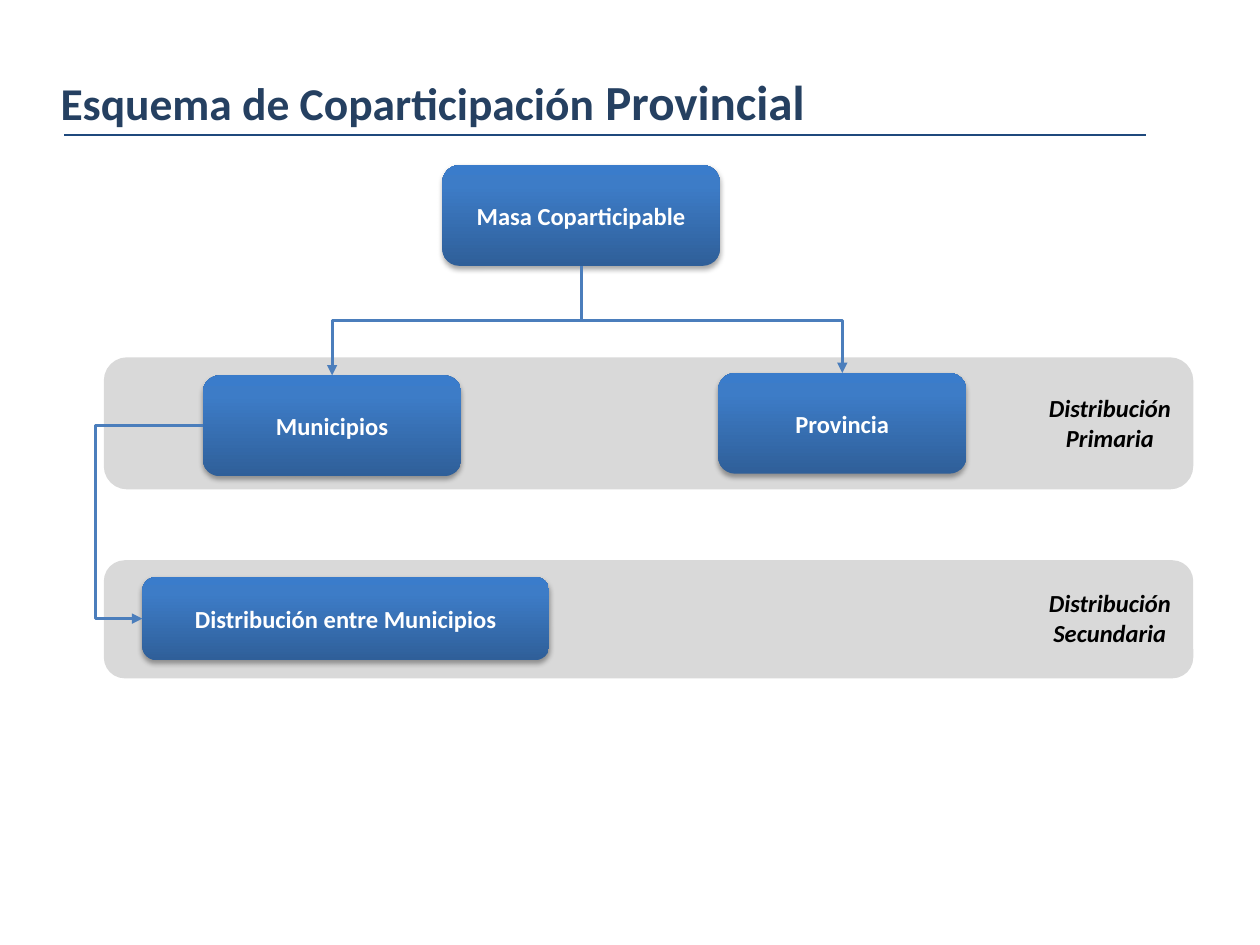
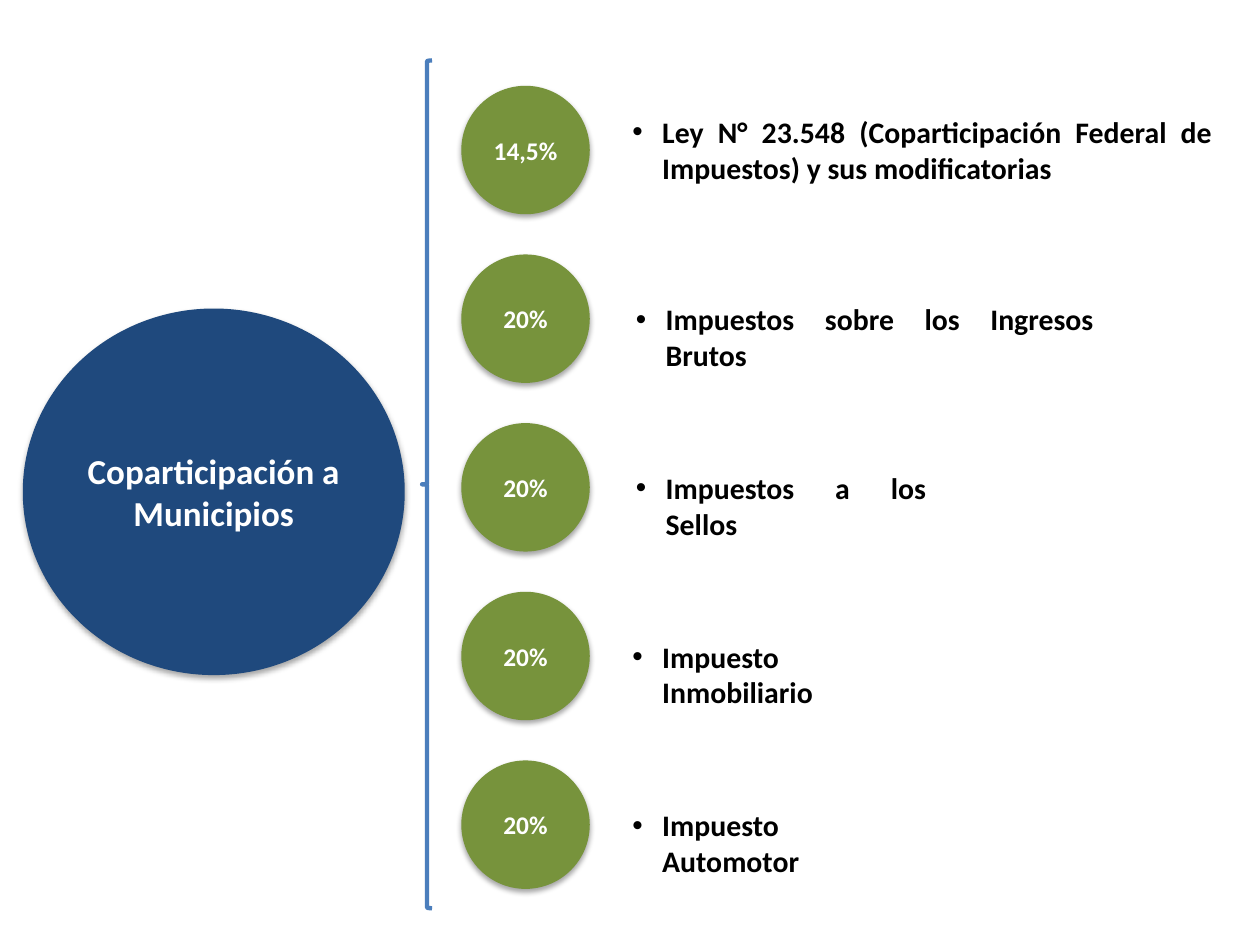
from lxml import etree
from pptx import Presentation
from pptx import util as u
from pptx.dml.color import RGBColor
from pptx.enum import shapes, text
from pptx.oxml import parse_xml
from pptx.oxml import ns
from pptx.oxml.xmlchemy import OxmlElement

COLORS = {
    "title": "254061", "navy": "1F497D", "blue": "4B7EBC", "green": "77933C",
    "band": "D9D9D9", "white": "FFFFFF", "black": "000000",
}
GRADIENT = ((0, "2F5F99"), (80, "3D7CC7"), (100, "3A7CCB"))
FONT = "Calibri"
SHAPE = shapes.MSO_SHAPE
ALIGN = text.PP_ALIGN
ANCHOR = text.MSO_ANCHOR


def rgb(name):
    return RGBColor.from_string(COLORS[name])


def child(parent, tag, **attributes):
    element = etree.SubElement(parent, ns.qn(tag))
    for key, value in attributes.items():
        element.set(key, str(value))
    return element


def write(shape, runs, size=14, color="black", italic=False, align=ALIGN.CENTER,
          anchor=ANCHOR.MIDDLE, inset=(0.25, 0.13), bullet=None):
    frame = shape.text_frame
    frame.word_wrap = True
    frame.auto_size = text.MSO_AUTO_SIZE.NONE
    frame.vertical_anchor = anchor
    frame.margin_left = frame.margin_right = u.Cm(inset[0])
    frame.margin_top = frame.margin_bottom = u.Cm(inset[1])
    paragraph = frame.paragraphs[0]
    paragraph.alignment = align
    if bullet:
        properties = paragraph._p.get_or_add_pPr()
        properties.set("marL", str(u.Cm(0.6)))
        properties.set("indent", str(-u.Cm(0.6)))
        child(properties, "a:buFont", typeface="Arial")
        child(properties, "a:buChar", char=bullet)
    if isinstance(runs, str):
        runs = [(runs, size)]
    for words, run_size in runs:
        run = paragraph.add_run()
        run.text = words
        run.font.name = FONT
        run.font.size = u.Pt(run_size)
        run.font.bold = True
        run.font.italic = italic
        run.font.color.rgb = rgb(color)


class Deck:
    def __init__(self):
        self.presentation = Presentation()
        self.presentation.slide_width = u.Cm(25.4)
        self.presentation.slide_height = u.Cm(19.05)
        self.slide = None

    def add_slide(self, layout):
        self.slide = self.presentation.slides.add_slide(
            self.presentation.slide_layouts.get_by_name(layout))

    def title(self, runs, left, top, width, height):
        title = self.slide.shapes.title
        title.left, title.top = u.Cm(left), u.Cm(top)
        title.width, title.height = u.Cm(width), u.Cm(height)
        write(title, runs, color="title", align=ALIGN.LEFT, anchor=ANCHOR.TOP)

    def shape(self, kind, left, top, width, height, fill=None, line=None,
              line_width=2, shadow=False):
        shape = self.slide.shapes.add_shape(
            kind, u.Cm(left), u.Cm(top), u.Cm(width), u.Cm(height))
        shape.shadow.inherit = False
        if fill:
            shape.fill.solid()
            shape.fill.fore_color.rgb = rgb(fill)
        else:
            shape.fill.background()
        if line:
            shape.line.color.rgb = rgb(line)
            shape.line.width = u.Pt(line_width)
        else:
            shape.line.fill.background()
        if shadow:
            effects = shape._element.spPr.find(ns.qn("a:effectLst"))
            outer = child(effects, "a:outerShdw", blurRad=u.Pt(3.1), dist=u.Pt(1.8),
                          dir=5400000, rotWithShape=0)
            child(child(outer, "a:srgbClr", val=COLORS["black"]), "a:alpha", val=35000)
        return shape

    def band(self, top, height, label, label_top):
        self.shape(SHAPE.ROUNDED_RECTANGLE, 2.13, top, 21.89, height, "band", "band")
        self.label(label, 20.62, label_top, 3.51, 1.45, italic=True)

    def gradient_box(self, words, left, top, width, height=2.03):
        box = self.shape(SHAPE.ROUNDED_RECTANGLE, left, top, width, height, shadow=True)
        box.fill.gradient()
        box.fill.gradient_angle = 90
        stops = box._element.spPr.find(".//" + ns.qn("a:gsLst"))
        for stop in list(stops):
            stops.remove(stop)
        for position, color in GRADIENT:
            child(child(stops, "a:gs", pos=position * 1000), "a:srgbClr", val=color)
        write(box, words, color="white", inset=(0.1, 0.13))
        return box

    def circle(self, words, left, top, width, height, fill, size):
        circle = self.shape(SHAPE.OVAL, left, top, width, height, fill, shadow=True)
        write(circle, words, size=size, color="white", inset=(0, 0))

    def label(self, words, left, top, width, height, **style):
        box = self.slide.shapes.add_textbox(
            u.Cm(left), u.Cm(top), u.Cm(width), u.Cm(height))
        write(box, words, **style)

    def connector(self, kind, color, width, points=(0, 0, 0, 0)):
        connector = self.slide.shapes.add_connector(kind, *map(u.Cm, points))
        connector.line.color.rgb = rgb(color)
        connector.line.width = u.Pt(width)
        connector._element.spPr.append(OxmlElement("a:effectLst"))
        return connector

    def elbow(self, start, start_side, end, end_side, rotation, flip=None, bend=0.5):
        connector = self.connector(shapes.MSO_CONNECTOR.ELBOW, "blue", 1.75)
        connector.begin_connect(start, start_side)
        connector.end_connect(end, end_side)
        center_x = (connector.begin_x + connector.end_x) // 2
        center_y = (connector.begin_y + connector.end_y) // 2
        width, height = connector.width, connector.height
        if rotation in (90, 270):
            width, height = height, width
        connector.left, connector.top = center_x - width // 2, center_y - height // 2
        connector.width, connector.height = width, height
        properties = connector._element.spPr
        frame = properties.find(ns.qn("a:xfrm"))
        for name in ("flipH", "flipV"):
            frame.attrib.pop(name, None)
        frame.set("rot", str(rotation * 60000))
        if flip:
            frame.set(flip, "1")
        adjustments = properties.find(".//" + ns.qn("a:avLst"))
        child(adjustments, "a:gd", name="adj1", fmla=f"val {round(bend * 100000)}")
        child(properties.find(ns.qn("a:ln")), "a:tailEnd", type="triangle")


def build_scheme(deck):
    deck.add_slide("Title Only")
    deck.title([("Esquema de Coparticipación ", 26), ("Provincial", 28)],
               0.97, 1.32, 22.4, 1.45)
    deck.connector(shapes.MSO_CONNECTOR.STRAIGHT, "navy", 1.5, (1.3, 2.72, 23.11, 2.72))
    deck.band(11.33, 2.31, "Distribución Secundaria", 11.73)
    deck.band(7.24, 2.59, "Distribución Primaria", 7.8)
    fund = deck.gradient_box("Masa Coparticipable", 8.92, 3.33, 5.59)
    province = deck.gradient_box("Provincia", 14.48, 7.52, 5)
    towns = deck.gradient_box("Municipios", 4.09, 7.57, 5.21)
    sharing = deck.gradient_box("Distribución entre Municipios", 2.87, 11.63, 8.2, 1.68)
    deck.elbow(fund, 2, towns, 0, 90)
    deck.elbow(fund, 2, province, 0, 270, "flipH", 0.51)
    deck.elbow(towns, 1, sharing, 1, 180, "flipV", 1.77)


def build_shares(deck):
    deck.add_slide("Blank")
    deck.shape(SHAPE.LEFT_BRACE, 8.51, 1.22, 0.2, 17.09, line="blue", line_width=2.5)
    deck.circle("Coparticipación a Municipios", 0.46, 6.22, 7.7, 7.39, "navy", 20)
    shares = (
        ("14,5%", "Ley N° 23.548 (Coparticipación Federal de Impuestos) y sus modificatorias",
         12.5, 12.19, 0.43),
        ("20%", "Impuestos sobre los Ingresos Brutos", 12.57, 9.73, 0.81),
        ("20%", "Impuestos a los Sellos", 12.57, 6.35, 0.81),
        ("20%", "Impuesto Inmobiliario", 12.5, 6.3, 0.81),
        ("20%", "Impuesto Automotor", 12.5, 6.02, 0.81),
    )
    for row, (percent, tax, left, width, offset) in enumerate(shares):
        top = 1.73 + 3.4 * row
        deck.circle(percent, 9.3, top, 2.59, 2.59, "green", 14.5)
        deck.label(tax, left, top + offset, width, 1.7, size=17, align=ALIGN.JUSTIFY,
                   anchor=ANCHOR.TOP, bullet="•")


def main():
    deck = Deck()
    build_scheme(deck)
    build_shares(deck)
    deck.presentation.save("out.pptx")


if __name__ == "__main__":
    main()
